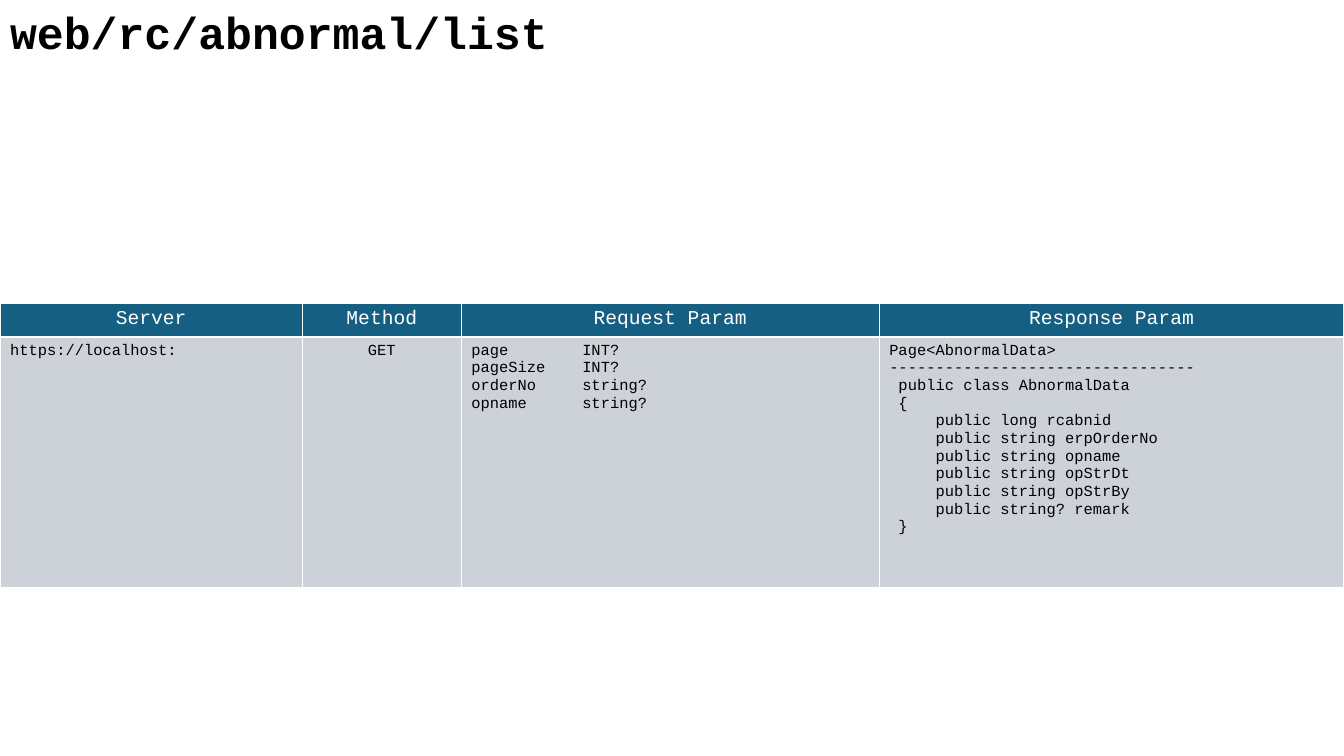
from pptx import Presentation
from pptx.dml.color import RGBColor
from pptx.enum.text import MSO_ANCHOR as Anchor, MSO_AUTO_SIZE as AutoSize, PP_ALIGN as Align
from pptx.oxml import parse_xml
from pptx.oxml.ns import nsdecls
from pptx.util import Pt

FONT = "Courier New"
HEADER_FILL, BODY_FILL = "156082", "CCD2D8"
WHITE, BLACK = "FFFFFF", "000000"

# Heading, column width, alignment of the body cell, body lines
COLUMNS = [
    ("Server", 216, Align.LEFT, ["https://localhost:"]),
    ("Method", 113.5, Align.CENTER, ["GET"]),
    ("Request Param", 298.5, Align.LEFT, [
        "page\tINT?",
        "pageSize\tINT?",
        "orderNo\tstring?",
        "opname\tstring?",
    ]),
    ("Response Param", 332, Align.LEFT, [
        "Page<AbnormalData>",
        "-" * 33,
        " public class AbnormalData",
        " {",
        "     public long rcabnid",
        "     public string erpOrderNo",
        "     public string opname",
        "     public string opStrDt",
        "     public string opStrBy",
        "     public string? remark",
        " }",
    ]),
]
ROW_HEIGHTS = [24, 178.75]
TYPE_TAB = 79.2  # where the parameter types start


def color(hex_string):
    return RGBColor.from_string(hex_string)


def add_tab_stop(paragraph, position):
    properties = paragraph._p.get_or_add_pPr()
    properties.append(parse_xml(
        f'<a:tabLst {nsdecls("a")}><a:tab pos="{Pt(position)}" algn="l"/></a:tabLst>'))


def write_lines(text_frame, lines, size, fill=BLACK, bold=False, align=Align.LEFT):
    for index, line in enumerate(lines):
        paragraph = text_frame.add_paragraph() if index else text_frame.paragraphs[0]
        paragraph.alignment = align
        if "\t" in line:
            add_tab_stop(paragraph, TYPE_TAB)
        run = paragraph.add_run()
        run.text = line
        run.font.name = FONT
        run.font.size = Pt(size)
        run.font.bold = bold
        run.font.color.rgb = color(fill)


def add_title(slide, text):
    title = slide.shapes.title
    title.left, title.top, title.width, title.height = Pt(0), Pt(0), Pt(680), Pt(46)
    frame = title.text_frame
    frame.vertical_anchor = Anchor.TOP
    frame.auto_size = AutoSize.SHAPE_TO_FIT_TEXT
    write_lines(frame, [text], 32, bold=True)


def fill_cell(cell, lines, background, **text_format):
    cell.fill.solid()
    cell.fill.fore_color.rgb = color(background)
    write_lines(cell.text_frame, lines, **text_format)


def add_api_table(slide, left, top):
    width = sum(column[1] for column in COLUMNS)
    table = slide.shapes.add_table(len(ROW_HEIGHTS), len(COLUMNS), Pt(left), Pt(top),
                                   Pt(width), Pt(sum(ROW_HEIGHTS))).table
    for row, height in zip(table.rows, ROW_HEIGHTS):
        row.height = Pt(height)
    for index, (heading, column_width, align, lines) in enumerate(COLUMNS):
        table.columns[index].width = Pt(column_width)
        fill_cell(table.cell(0, index), [heading], HEADER_FILL,
                  size=14, fill=WHITE, align=Align.CENTER)
        fill_cell(table.cell(1, index), lines, BODY_FILL, size=11, align=align)


def main():
    presentation = Presentation()
    presentation.slide_width, presentation.slide_height = Pt(960), Pt(540)
    slide = presentation.slides.add_slide(presentation.slide_layouts[5])  # Title Only
    add_title(slide, "web/rc/abnormal/list")
    add_api_table(slide, 0, 216.75)
    presentation.save("out.pptx")


if __name__ == "__main__":
    main()
